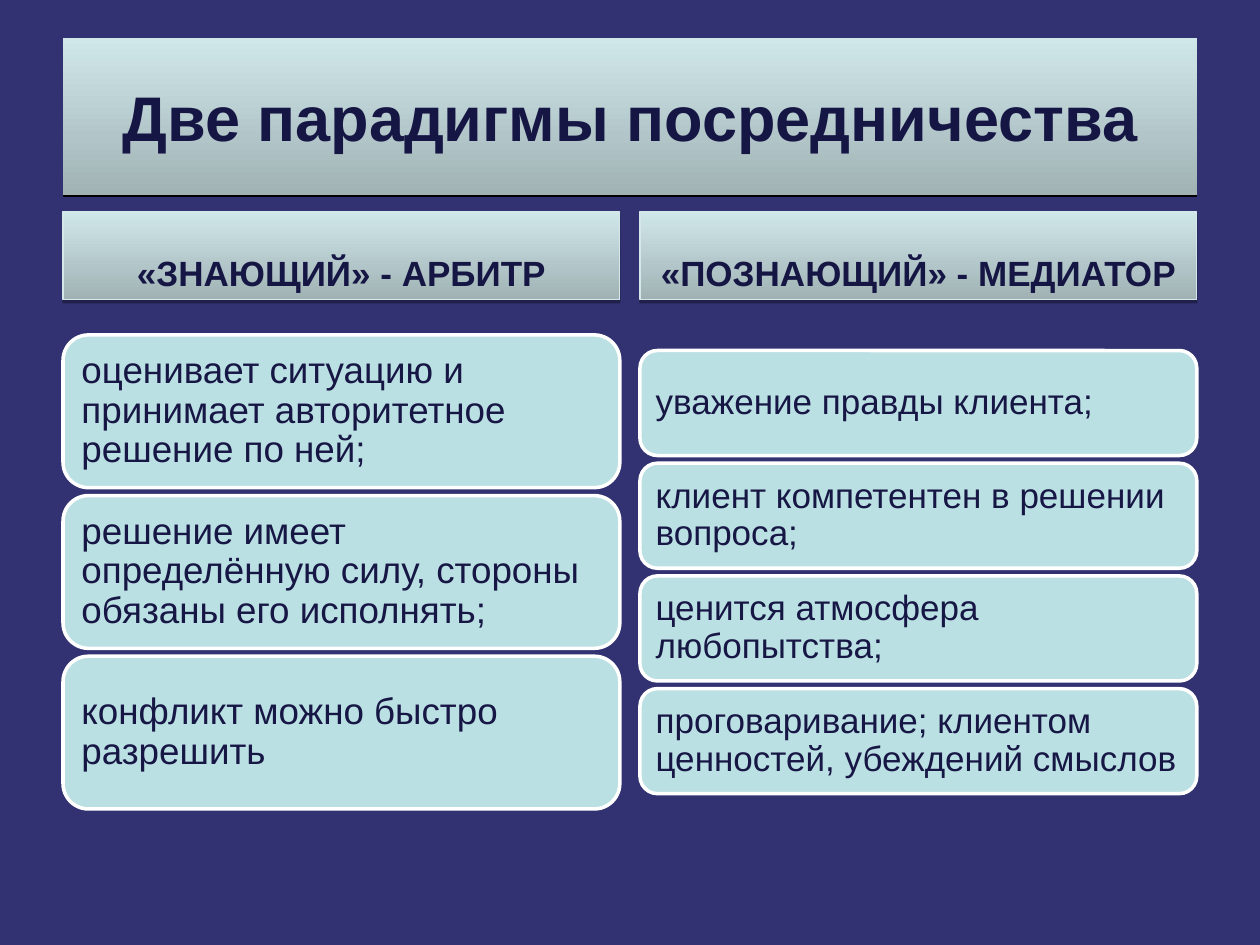
from lxml import etree
from pptx import Presentation
from pptx.dml.color import RGBColor
from pptx.enum.shapes import MSO_SHAPE
from pptx.enum.text import MSO_ANCHOR, PP_ALIGN
from pptx.oxml.ns import qn
from pptx.util import Pt

RECT, ROUND = MSO_SHAPE.RECTANGLE, MSO_SHAPE.ROUNDED_RECTANGLE
MIDDLE, BOTTOM = MSO_ANCHOR.MIDDLE, MSO_ANCHOR.BOTTOM
LEFT, CENTER = PP_ALIGN.LEFT, PP_ALIGN.CENTER

COLORS = {
    "back": "323272", "dark": "A0B2B4", "light": "D0E7EA",
    "edge": "D5E7E9", "card": "BBE0E3", "white": "FFFFFF",
    "head": "161645", "body": "171745", "shade": "000000",
}


def rgb(name):
    return RGBColor.from_string(COLORS[name])


class Deck:
    font = "Arial"

    def __init__(self, wide, high):
        self.prs = Presentation()
        self.prs.slide_width, self.prs.slide_height = Pt(wide), Pt(high)
        self.slide = self.prs.slides.add_slide(self.prs.slide_layouts[6])
        fill = self.slide.background.fill
        fill.solid()
        fill.fore_color.rgb = rgb("back")

    def shape(self, kind, box, line=None, weight=0):
        item = self.slide.shapes.add_shape(kind, *map(Pt, box))
        item.shadow.inherit = False
        if line:
            item.line.color.rgb = rgb(line)
            item.line.width = Pt(weight)
        else:
            item.line.fill.background()
        return item

    def label(self, item, text, size, color, align, anchor, bold=False):
        frame = item.text_frame
        frame.word_wrap = True
        frame.vertical_anchor = anchor
        frame.text = text
        para = frame.paragraphs[0]
        para.alignment = align
        font = para.runs[0].font
        font.name, font.size, font.bold = self.font, Pt(size), bold
        font.color.rgb = rgb(color)
        return para

    def shade(self, item, alpha, drop):
        effects = item._element.spPr.find(qn("a:effectLst"))
        outer = etree.SubElement(effects, qn("a:outerShdw"), blurRad="0",
                                 dist=str(Pt(drop)), dir="5400000", rotWithShape="0")
        color = etree.SubElement(outer, qn("a:srgbClr"), val=COLORS["shade"])
        etree.SubElement(color, qn("a:alpha"), val=str(alpha * 1000))

    def banner(self, box, text, size, anchor, alpha, drop, line=None):
        item = self.shape(RECT, box, line, 0.75)
        item.fill.gradient()
        item.fill.gradient_angle = 90
        for stop, name, pos in zip(item.fill.gradient_stops, ("dark", "light"), (0, 1)):
            stop.color.rgb = rgb(name)
            stop.position = pos
        self.shade(item, alpha, drop)
        return self.label(item, text, size, "head", CENTER, anchor, True)

    def card(self, box, text, size, inset):
        item = self.shape(ROUND, box, "white", 2)
        item.fill.solid()
        item.fill.fore_color.rgb = rgb("card")
        frame = item.text_frame
        frame.margin_left = frame.margin_right = Pt(inset)
        frame.margin_top = frame.margin_bottom = Pt(inset)
        para = self.label(item, text, size, "body", LEFT, MIDDLE)
        para.line_spacing = 0.9


# Each column: left, heading, first top, card height, step, text size, inset, cards
COLUMNS = [
    (36, "«ЗНАЮЩИЙ» - АРБИТР", 191.4, 87.3, 91.8, 21, 6.3, [
        "оценивает ситуацию и принимает авторитетное решение по ней;",
        "решение имеет определённую силу, стороны обязаны его исполнять;",
        "конфликт можно быстро разрешить",
    ]),
    (365.7, "«ПОЗНАЮЩИЙ» - МЕДИАТОР", 200.3, 60, 64.4, 20, 6, [
        "уважение правды клиента;",
        "клиент компетентен в решении вопроса;",
        "ценится атмосфера любопытства;",
        "проговаривание; клиентом ценностей, убеждений смыслов",
    ]),
]
WIDTH = 318.2


def main():
    deck = Deck(720, 540)

    # Title
    deck.banner((36, 21.6, 648, 90), "Две парадигмы посредничества", 36, MIDDLE, 100, 1)

    # Columns: heading and stacked cards
    for left, head, top, high, step, size, inset, cards in COLUMNS:
        para = deck.banner((left, 120.9, WIDTH, 50.4), head, 20, BOTTOM, 35, 1.8, "edge")
        para.space_before = Pt(4)
        for row, text in enumerate(cards):
            deck.card((left, top + row * step, WIDTH, high), text, size, inset)

    deck.prs.save("out.pptx")


if __name__ == "__main__":
    main()
